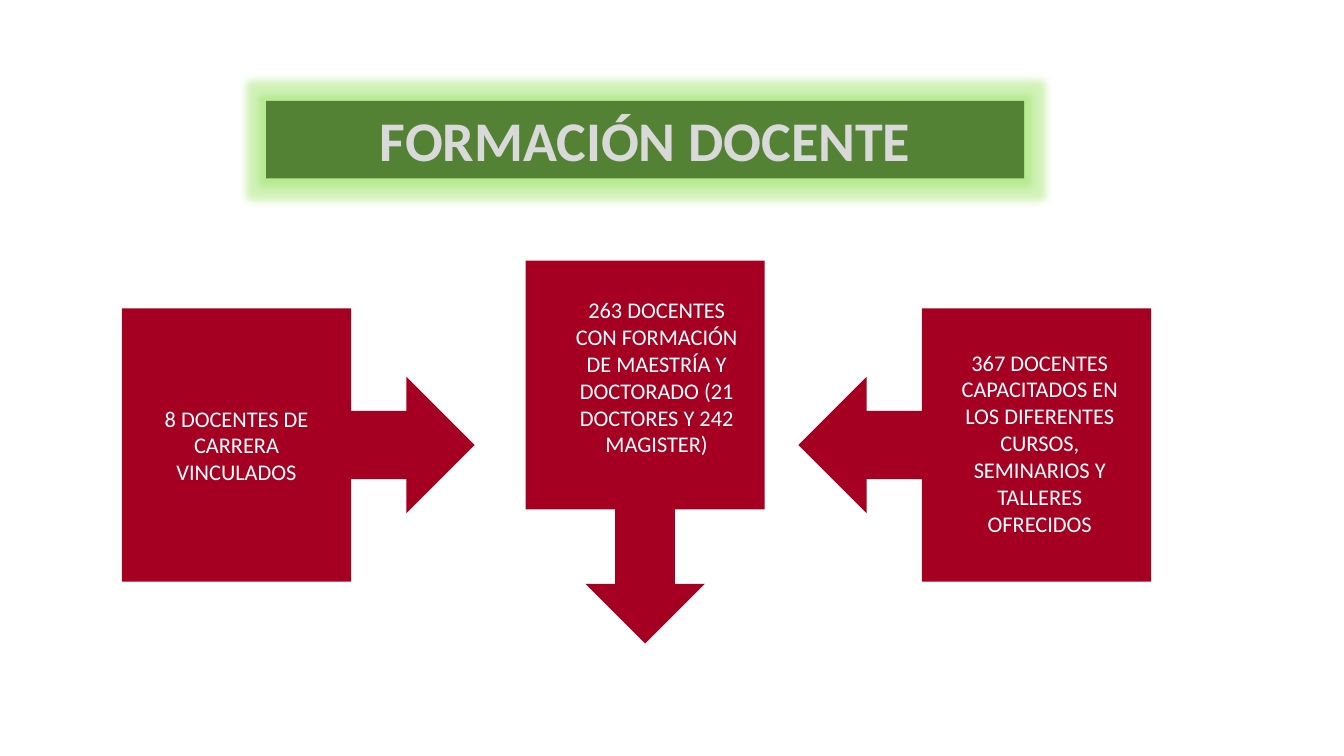
from dataclasses import dataclass

from lxml.etree import SubElement
from pptx import Presentation
from pptx.dml.color import RGBColor
from pptx.enum.shapes import MSO_SHAPE
from pptx.enum.text import MSO_ANCHOR, MSO_AUTO_SIZE, PP_ALIGN
from pptx.oxml.ns import qn
from pptx.shapes.autoshape import Shape
from pptx.slide import Slide
from pptx.util import Inches, Pt

# Grid of 160 columns by 90 rows
CELL = Inches(13.333) / 160
GREEN, GLOW, RED = "548235", "8FE052", "A50021"
GREY, WHITE = "D9D9D9", "FFFFFF"


@dataclass(frozen=True)
class Area:
    column: float
    row: float
    columns: float
    rows: float

    def lengths(self) -> list[int]:
        return [round(value * CELL) for value in
                (self.column, self.row, self.columns, self.rows)]


@dataclass(frozen=True)
class Callout:
    area: Area
    rotation: int
    text: str
    label: Area | None = None  # upright label for a rotated callout


CALLOUTS = [
    Callout(Area(14.52, 36.72, 42, 32.52), 0, "8 DOCENTES DE CARRERA VINCULADOS"),
    Callout(Area(54, 39.6, 45.6, 28.44), 90,
            "263 DOCENTES CON FORMACIÓN DE MAESTRÍA Y DOCTORADO "
            "(21 DOCTORES Y 242 MAGISTER)",
            Area(66.72, 34.68, 22.92, 20.64)),
    Callout(Area(95.04, 36.72, 42, 32.52), 180,
            "367 DOCENTES CAPACITADOS EN LOS DIFERENTES CURSOS, "
            "SEMINARIOS Y TALLERES OFRECIDOS",
            Area(112.32, 40.92, 22.92, 23.88)),
]


def color(value: str) -> RGBColor:
    return RGBColor.from_string(value)


def write(shape: Shape, text: str, size: int, font_color: str,
          bold: bool = False, grow: bool = True) -> None:
    frame = shape.text_frame
    frame.word_wrap = True
    if grow:
        frame.auto_size = MSO_AUTO_SIZE.SHAPE_TO_FIT_TEXT
    frame.vertical_anchor = MSO_ANCHOR.TOP if grow else MSO_ANCHOR.MIDDLE
    paragraph = frame.paragraphs[0]
    paragraph.text = text
    paragraph.alignment = PP_ALIGN.CENTER
    paragraph.font.name = "Calibri"
    paragraph.font.size = Pt(size)
    paragraph.font.bold = bold
    paragraph.font.color.rgb = color(font_color)


def add_block(slide: Slide, kind: MSO_SHAPE, area: Area, fill: str) -> Shape:
    shape = slide.shapes.add_shape(kind, *area.lengths())
    shape.shadow.inherit = False
    shape.fill.solid()
    shape.fill.fore_color.rgb = color(fill)
    shape.line.fill.background()
    return shape


def add_glow(shape: Shape, glow_color: str, radius: int, opacity: int) -> None:
    effects = shape.element.spPr.find(qn("a:effectLst"))
    glow = SubElement(effects, qn("a:glow"), rad=str(Pt(radius)))
    tint = SubElement(glow, qn("a:srgbClr"), val=glow_color)
    SubElement(tint, qn("a:alpha"), val=str(opacity * 1000))


def add_callout(slide: Slide, callout: Callout) -> None:
    shape = add_block(slide, MSO_SHAPE.RIGHT_ARROW_CALLOUT, callout.area, RED)
    shape.rotation = callout.rotation
    if callout.label is None:
        write(shape, callout.text, 16, WHITE, grow=False)


def add_label(slide: Slide, callout: Callout) -> None:
    if callout.label is not None:
        label = slide.shapes.add_textbox(*callout.label.lengths())
        write(label, callout.text, 16, WHITE)


def main() -> None:
    presentation = Presentation()
    presentation.slide_width = Inches(13.333)
    presentation.slide_height = Inches(7.5)
    slide = presentation.slides.add_slide(presentation.slide_layouts[6])

    # Title banner
    banner = add_block(slide, MSO_SHAPE.RECTANGLE,
                       Area(31.68, 12, 90.24, 9.24), GREEN)
    add_glow(banner, GLOW, radius=11, opacity=40)
    write(banner, "FORMACIÓN DOCENTE", 40, GREY, bold=True)

    # Arrow callouts, then their upright labels on top
    for callout in CALLOUTS:
        add_callout(slide, callout)
    for callout in CALLOUTS:
        add_label(slide, callout)

    presentation.save("out.pptx")


if __name__ == "__main__":
    main()
